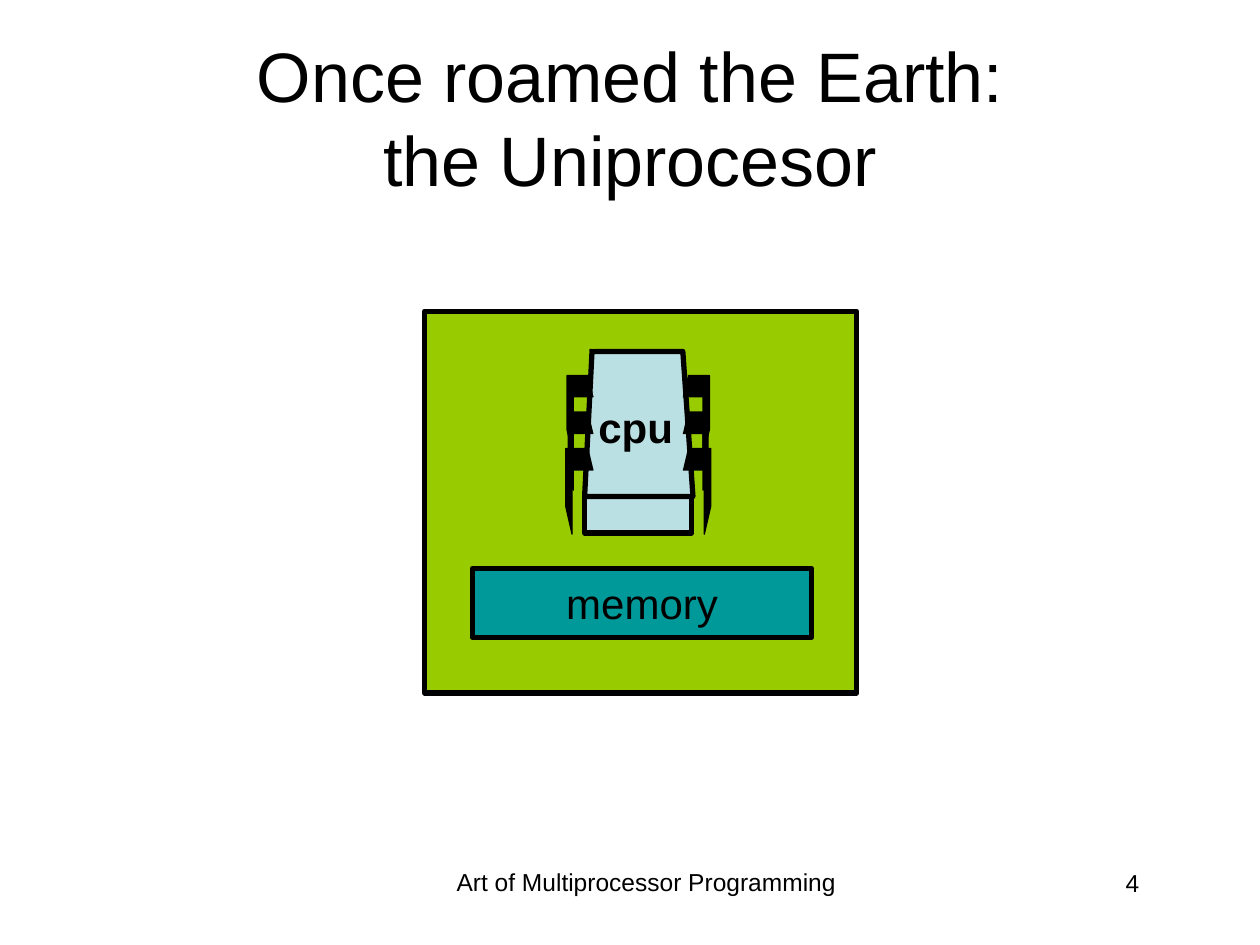
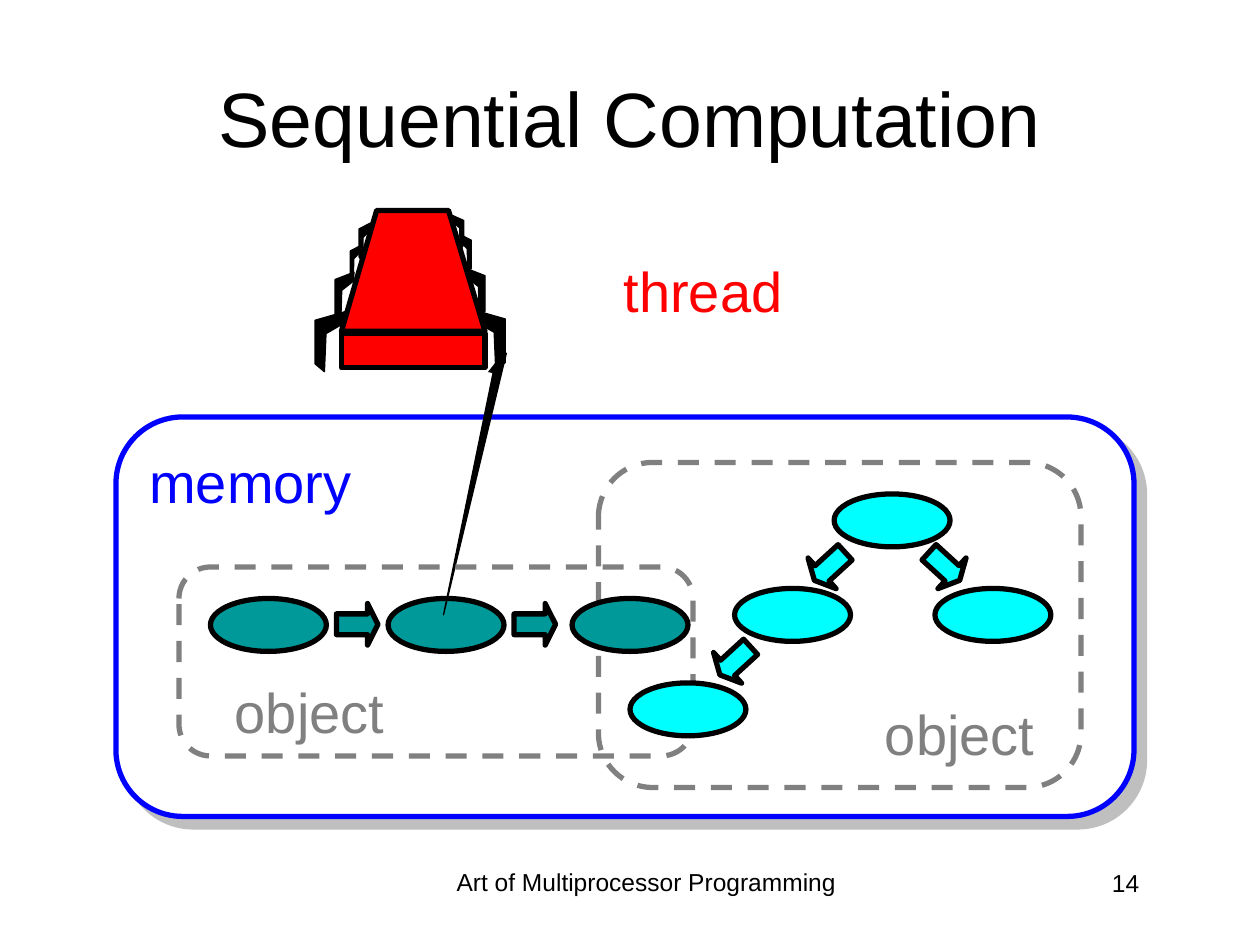
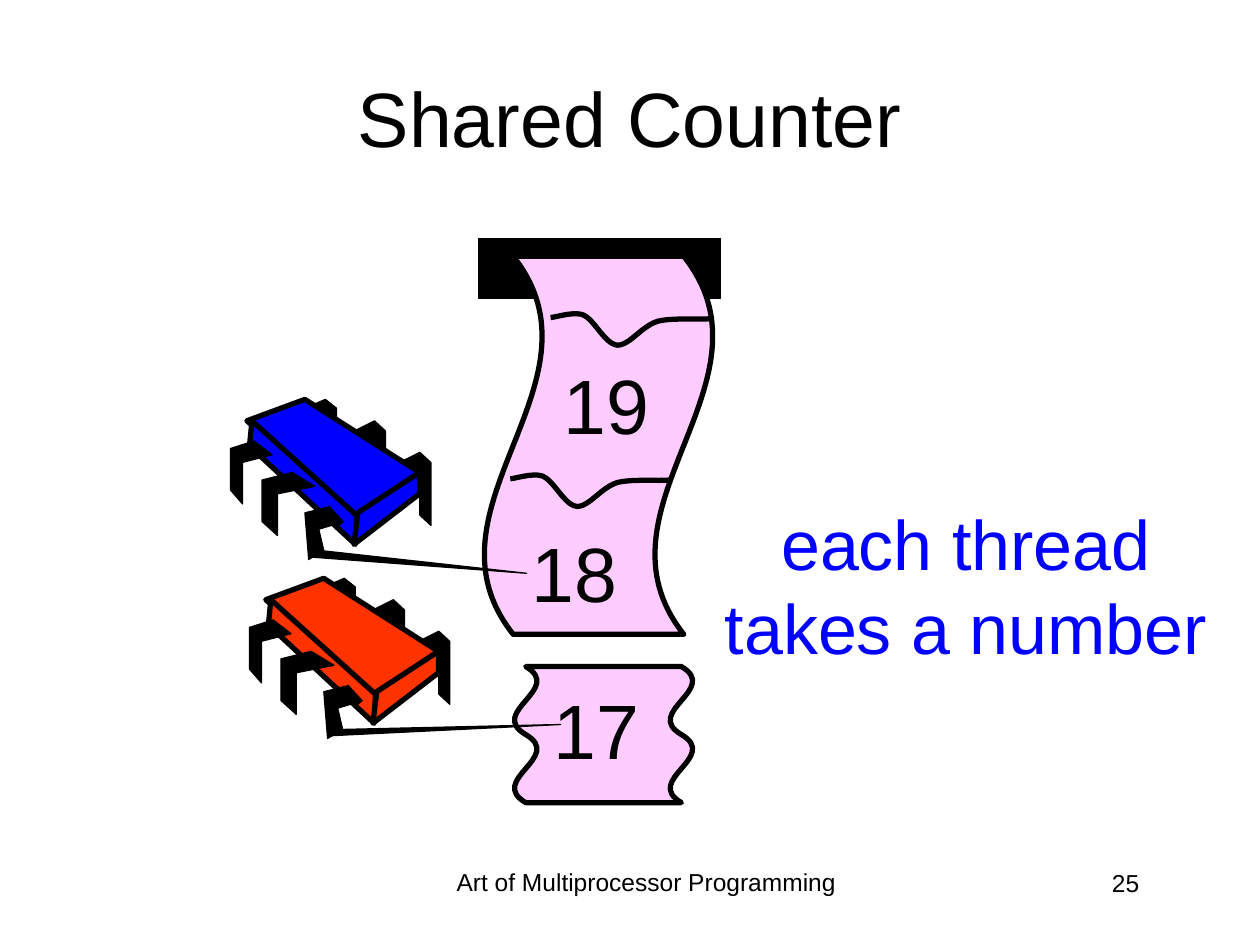
from typing import NamedTuple, Optional

from lxml import etree
from pptx import Presentation
from pptx import util as u
from pptx.dml.color import RGBColor
from pptx.enum import dml, shapes, text
from pptx.oxml import ns

FONT = "Arial"
COLORS = {
    "black": "000000", "white": "FFFFFF", "gray": "808080",
    "green": "99CC00", "pale": "BBE0E3", "teal": "009999",
    "cyan": "00FFFF", "blue": "0000FF", "red": "FF0000",
    "orange": "FF3300", "pink": "FFCCFF",
}
ALIGN = {"l": text.PP_ALIGN.LEFT, "c": text.PP_ALIGN.CENTER, "r": text.PP_ALIGN.RIGHT}
KIND = shapes.MSO_SHAPE
THICK, THIN = 3, 0.75

Point = tuple[float, float]


class Box(NamedTuple):
    x: float
    y: float
    w: float
    h: float


class Pin(NamedTuple):
    """Right-hand pin of the uniprocessor, given by its top and its columns."""
    top: float
    inner: float
    outer: float
    shank: float
    knee: float
    foot: float


class Leg(NamedTuple):
    """A unit outline stretched over a box."""
    outline: list[Point]
    box: Box
    mirrored: bool = False


class Node(NamedTuple):
    x: float
    y: float
    color: str


class Arrow(NamedTuple):
    x: float
    y: float
    color: str
    angle: float = 0


class Label(NamedTuple):
    words: str
    box: Box
    size: float
    color: str = "black"


# Unit outlines of the chip legs
THREAD_LEG = [(0, 0), (1, 0.15), (1, 0.87), (0.7, 1), (0.65, 0.37), (0.05, 0.19)]
FAR_LEG = [(0, 0.14), (0.65, 0), (1, 0.14), (1, 1), (0.65, 0.86), (0.65, 0.28), (0, 0.43)]
NEAR_LEG = [(0.57, 0), (1, 0.22), (0.29, 0.34), (0.29, 1), (0, 0.78), (0, 0.12)]


# ---- Drawing helpers ----
def rgb(name: str) -> RGBColor:
    return RGBColor.from_string(COLORS[name])


def inches(box: Box) -> list[u.Length]:
    return [u.Inches(v) for v in box]


def paint(sp, fill: Optional[str], line: str = "black", width: float = THICK) -> None:
    sp.shadow.inherit = False
    if fill:
        sp.fill.solid()
        sp.fill.fore_color.rgb = rgb(fill)
    else:
        sp.fill.background()
    sp.line.color.rgb = rgb(line)
    sp.line.width = u.Pt(width)


def write(sp, words: str, *, size: float, color: str = "black", align: str = "l",
          bold: bool = False, middle: bool = False, wrap: bool = True) -> None:
    tf = sp.text_frame
    tf.word_wrap = wrap
    tf.vertical_anchor = text.MSO_ANCHOR.MIDDLE if middle else text.MSO_ANCHOR.TOP
    p = tf.paragraphs[0]
    p.text = words
    p.alignment = ALIGN[align]
    for r in p.runs:
        r.font.name, r.font.size, r.font.bold = FONT, u.Pt(size), bold
        r.font.color.rgb = rgb(color)


def add_text(s, words: str, box: Box, **style) -> None:
    write(s.shapes.add_textbox(*inches(box)), words, **style)


def add_label(s, label: Label, bold: bool = False) -> None:
    add_text(s, label.words, label.box, size=label.size, color=label.color,
             align="r", bold=bold, wrap=False)


def add_preset(group, kind, box: Box, fill: Optional[str], line: str = "black",
               width: float = THICK, adj: tuple = (), angle: float = 0):
    sp = group.add_shape(kind, *inches(box))
    paint(sp, fill, line, width)
    for i, value in enumerate(adj):
        sp.adjustments[i] = value
    sp.rotation = angle
    return sp


def add_outline(group, points: list[Point], fill: Optional[str] = "black",
                width: float = THIN, closed: bool = True, arrow: bool = False):
    (x, y), *rest = [(u.Inches(px), u.Inches(py)) for px, py in points]
    builder = group.build_freeform(x, y, scale=1.0)
    builder.add_line_segments(rest, close=closed)
    sp = builder.convert_to_shape()
    paint(sp, fill, width=width)
    if arrow:
        ln = sp.line._get_or_add_ln()
        etree.SubElement(ln, ns.qn("a:tailEnd"), type="triangle")
    return sp


def add_leg(group, leg: Leg, dx: float = 0, dy: float = 0) -> None:
    x, y, w, h = leg.box
    add_outline(group, [(x + dx + w * (1 - fx if leg.mirrored else fx), y + dy + h * fy)
                        for fx, fy in leg.outline])


def add_node(s, node: Node) -> None:
    add_preset(s.shapes, KIND.OVAL, Box(node.x, node.y, 0.92, 0.42), node.color)


def add_dashed_box(s, box: Box) -> None:
    sp = add_preset(s.shapes, KIND.ROUNDED_RECTANGLE, box, None, "gray", adj=(0.167,))
    sp.line.dash_style = dml.MSO_LINE.DASH


def add_drop_shadow(sp) -> None:
    effects = sp._element.spPr.find(ns.qn("a:effectLst"))
    shadow = etree.SubElement(effects, ns.qn("a:outerShdw"), dist=str(u.Pt(8.5)),
                              dir="2700000", algn="ctr", rotWithShape="0")
    color = etree.SubElement(shadow, ns.qn("a:srgbClr"), val=COLORS["gray"])
    etree.SubElement(color, ns.qn("a:alpha"), val="50000")


def curve(start: Point, segments: list[tuple[Point, Point, Point]], steps: int = 12) -> list[Point]:
    """Sample a chain of cubic Bézier segments."""
    points = [start]
    for b, c, d in segments:
        a = points[-1]
        for i in range(1, steps + 1):
            t = i / steps
            k = ((1 - t) ** 3, 3 * t * (1 - t) ** 2, 3 * t * t * (1 - t), t ** 3)
            points.append(tuple(sum(f * q[axis] for f, q in zip(k, (a, b, c, d)))
                                for axis in (0, 1)))
    return points


def new_slide(prs, title: str, number: int, size: float = 44):
    s = prs.slides.add_slide(prs.slide_layouts[6])
    add_text(s, "Art of Multiprocessor Programming", Box(3.42, 6.83, 3.42, 0.52),
             size=14, align="c")
    add_text(s, str(number), Box(7.06, 6.84, 2.08, 0.5), size=14, align="r")
    add_text(s, title, Box(0.5, 0.3, 9, 1.25), size=size, align="c", middle=True)
    return s


# ---- Slide: uniprocessor ----
def uniprocessor(prs) -> None:
    s = new_slide(prs, "Once roamed the Earth:\nthe Uniprocesor", 4, size=40)
    add_preset(s.shapes, KIND.RECTANGLE, Box(3.37, 2.47, 3.43, 3.03), "green")

    # Chip body, then pins on both sides
    chip = s.shapes.add_group_shape().shapes
    add_preset(chip, KIND.RECTANGLE, Box(4.64, 3.94, 0.85, 0.29), "pale")
    add_outline(chip, [(4.72, 2.79), (5.42, 2.79), (5.5, 3.94), (4.64, 3.94), (4.7, 2.77)],
                "pale", THICK, closed=False)
    pins = [Pin(3.56, 5.46, 5.64, 5.59, 4.02, 4.24),
            Pin(3.27, 5.46, 5.62, 5.58, 3.69, 3.89),
            Pin(2.98, 5.46, 5.63, 5.58, 3.41, 3.62)]
    mirror_sum = 10.13
    for mirrored in (False, True):
        for pin in pins:
            bottom = pin.top + 0.17
            points = [(pin.inner, pin.top), (pin.outer, pin.top), (pin.outer, pin.knee),
                      (pin.shank, pin.foot), (pin.shank, bottom), (5.42, bottom)]
            if mirrored:
                points = [(mirror_sum - x, y) for x, y in points]
            add_outline(chip, points, closed=False)

    memory = add_preset(s.shapes, KIND.RECTANGLE, Box(3.75, 4.51, 2.69, 0.55), "teal")
    write(memory, "memory", size=24, align="c", middle=True, wrap=False)
    add_label(s, Label("cpu", Box(4.64, 3.14, 0.8, 0.51), 24), bold=True)


# ---- Slide: sequential computation ----
def sequential(prs) -> None:
    s = new_slide(prs, "Sequential Computation", 14)
    memory = add_preset(s.shapes, KIND.ROUNDED_RECTANGLE, Box(0.92, 3.31, 8.08, 3.17),
                        "white", "blue", adj=(0.167,))
    add_drop_shadow(memory)

    # Thread
    thread = s.shapes.add_group_shape().shapes
    for box, mirrored in [
        (Box(3.76, 2.46, 0.25, 0.48), False), (Box(3.7, 2.13, 0.15, 0.39), False),
        (Box(3.65, 1.86, 0.09, 0.31), False), (Box(3.59, 1.71, 0.09, 0.27), False),
        (Box(2.5, 2.47, 0.25, 0.48), True), (Box(2.66, 2.16, 0.15, 0.39), True),
        (Box(2.85, 1.77, 0.09, 0.31), True), (Box(2.78, 1.95, 0.08, 0.28), True),
    ]:
        add_leg(thread, Leg(THREAD_LEG, box, mirrored))
    add_outline(thread, [(2.71, 2.63), (2.99, 1.67), (3.56, 1.67), (3.85, 2.63)], "red", THICK)
    add_preset(thread, KIND.RECTANGLE, Box(2.71, 2.65, 1.14, 0.27), "red")

    # List and tree
    for node in [Node(1.67, 4.75, "teal"), Node(7.42, 4.67, "cyan"), Node(6.62, 3.92, "cyan"),
                 Node(5.83, 4.67, "cyan"), Node(3.08, 4.75, "teal")]:
        add_node(s, node)
    for a in [Arrow(2.67, 4.79, "teal"), Arrow(4.08, 4.79, "teal"),
              Arrow(7.33, 4.33, "cyan", 42.5), Arrow(6.42, 4.33, "cyan", 137.5),
              Arrow(5.67, 5.08, "cyan", 137.5)]:
        add_preset(s.shapes, KIND.RIGHT_ARROW, Box(a.x, a.y, 0.33, 0.33), a.color,
                   adj=(0.5, 0.25), angle=a.angle)

    # Reaching arm, object frames and the nodes over them
    add_outline(s.shapes, [(4.02, 2.8), (3.52, 4.88), (3.93, 2.88)], closed=False, arrow=True)
    add_dashed_box(s, Box(1.42, 4.5, 4.08, 1.5))
    add_dashed_box(s, Box(4.75, 3.67, 3.83, 2.58))
    add_node(s, Node(5, 5.42, "cyan"))
    add_node(s, Node(4.54, 4.75, "teal"))
    for label in [Label("memory", Box(1.08, 3.5, 1.81, 0.63), 32, "blue"),
                  Label("object", Box(1.75, 5.33, 1.4, 0.64), 32, "gray"),
                  Label("object", Box(6.91, 5.5, 1.4, 0.64), 32, "gray"),
                  Label("thread", Box(4.84, 1.99, 1.47, 0.64), 32, "red")]:
        add_label(s, label)


# ---- Slide: shared counter ----
def add_reaching_chip(s, color: str, dx: float, dy: float, tip: Point) -> None:
    chip = s.shapes.add_group_shape().shapes

    def moved(*points: Point) -> list[Point]:
        return [(x + dx, y + dy) for x, y in points]

    for box in (Box(3.17, 3.59, 0.25, 0.58), Box(2.81, 3.34, 0.25, 0.58),
                Box(2.42, 3.17, 0.25, 0.5)):
        add_leg(chip, Leg(FAR_LEG, box), dx, dy)
    for face in (
        [(2.42, 3.17), (3.33, 3.75), (2.82, 4.1), (1.96, 3.34)],
        [(2, 3.34), (2.83, 4.09), (2.82, 4.32), (1.98, 3.54)],
        [(3.33, 3.75), (3.33, 3.92), (2.81, 4.32), (2.84, 4.07)],
    ):
        add_outline(chip, moved(*face), color, THICK)
    for box in (Box(2.08, 3.75, 0.42, 0.5), Box(1.83, 3.5, 0.33, 0.5)):
        add_leg(chip, Leg(NEAR_LEG, box), dx, dy)

    # Arm from the front leg to the ticket
    start, end = moved((2.45, 4.42), (2.55, 4.37))
    add_outline(chip, [start, tip, end], closed=False)
    add_outline(chip, moved((2.62, 4.02), (2.42, 4.07), (2.45, 4.44), (2.57, 4.37),
                            (2.53, 4.2), (2.73, 4.14)), closed=False, arrow=True)


def shared_counter(prs) -> None:
    s = new_slide(prs, "Shared Counter", 25)

    # Ticket dispenser and paper
    add_preset(s.shapes, KIND.RECTANGLE, Box(3.8, 1.89, 1.92, 0.48), "black", width=THIN)
    add_preset(s.shapes, KIND.WAVE, Box(3.25, 2.62, 3, 1.83), "pink", adj=(0.13, 0), angle=90)
    add_preset(s.shapes, KIND.DOUBLE_WAVE, Box(4.25, 5.12, 1.08, 1.42), "pink",
               adj=(0.065, 0), angle=90)
    for number, x, y in [("17", 4.28, 5.37), ("18", 4.11, 4.12), ("19", 4.36, 2.79)]:
        add_label(s, Label(number, Box(x, y, 0.89, 0.84), 44))

    # Tear lines
    tear = curve((4.37, 2.52), [
        ((4.41, 2.52), (4.55, 2.47), (4.63, 2.5)),
        ((4.72, 2.54), (4.8, 2.73), (4.9, 2.74)),
        ((5, 2.74), (5.09, 2.59), (5.22, 2.55)),
        ((5.34, 2.52), (5.55, 2.54), (5.63, 2.53)),
    ])
    for dx, dy in [(0, 0), (-0.32, 1.28)]:
        add_outline(s.shapes, [(x + dx, y + dy) for x, y in tear], None, THICK, closed=False)

    add_text(s, "each thread takes a number", Box(5.5, 3.92, 4.33, 1.43),
             size=40, color="blue", align="c")
    add_reaching_chip(s, "blue", 0, 0, tip=(4.18, 4.55))
    add_reaching_chip(s, "orange", 0.15, 1.42, tip=(4.45, 5.75))


def main() -> None:
    prs = Presentation()
    prs.slide_width, prs.slide_height = u.Inches(10), u.Inches(7.5)
    uniprocessor(prs)
    sequential(prs)
    shared_counter(prs)
    prs.save("out.pptx")


if __name__ == "__main__":
    main()
